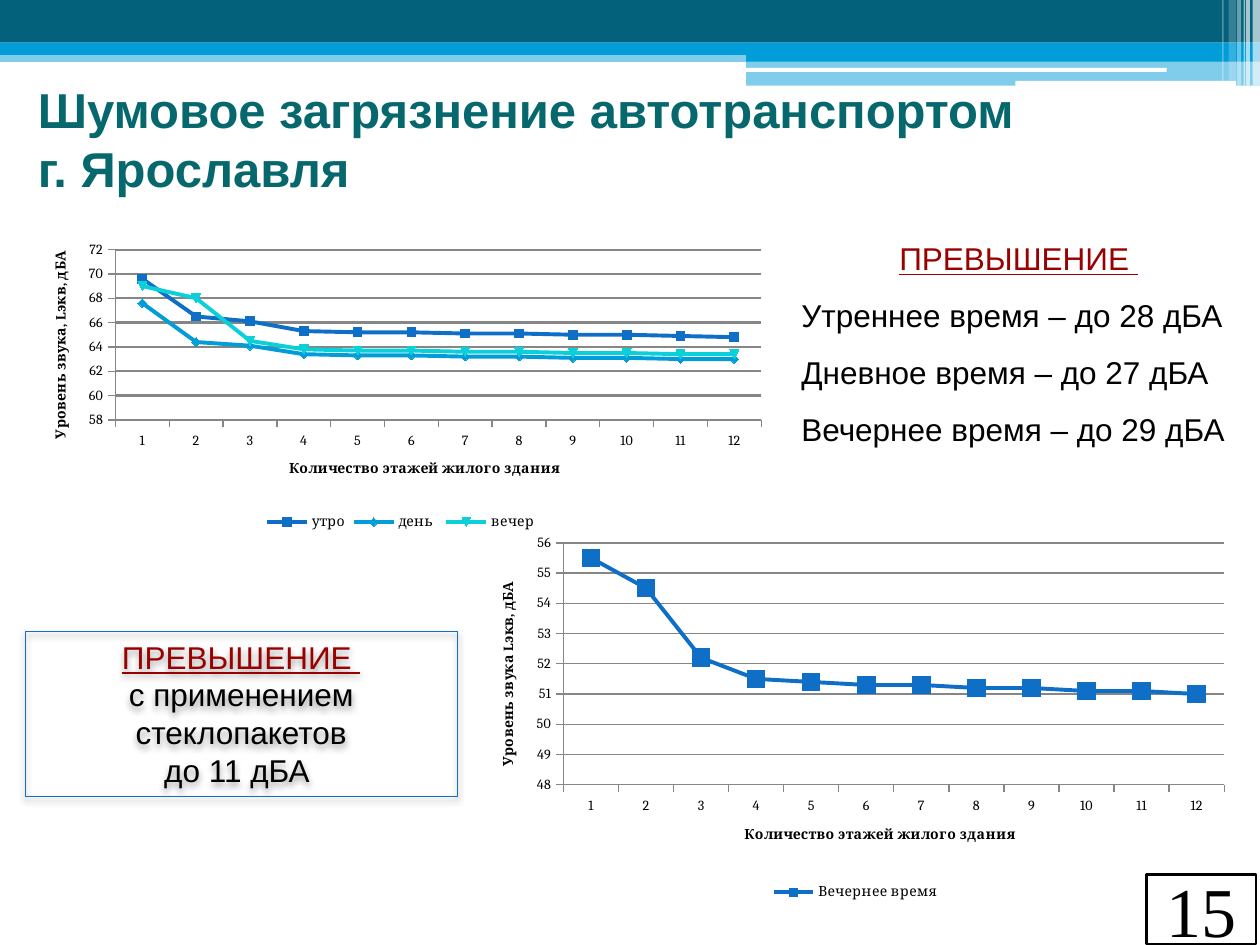
from lxml import etree
from pptx import Presentation
from pptx.chart.data import CategoryChartData
from pptx.dml.color import RGBColor
from pptx.enum.chart import XL_CHART_TYPE, XL_LEGEND_POSITION, XL_MARKER_STYLE, XL_TICK_MARK
from pptx.enum.shapes import MSO_SHAPE
from pptx.enum.text import MSO_ANCHOR, MSO_AUTO_SIZE, PP_ALIGN
from pptx.oxml import parse_xml
from pptx.oxml.ns import qn
from pptx.util import Cm, Pt

RECT, ROUNDED = MSO_SHAPE.RECTANGLE, MSO_SHAPE.ROUNDED_RECTANGLE
LEFT, CENTER = PP_ALIGN.LEFT, PP_ALIGN.CENTER
TOP, MIDDLE = MSO_ANCHOR.TOP, MSO_ANCHOR.MIDDLE
LINE_CHART = XL_CHART_TYPE.LINE_MARKERS
SQUARE = XL_MARKER_STYLE.SQUARE
BOTTOM = XL_LEGEND_POSITION.BOTTOM
OUTSIDE = XL_TICK_MARK.OUTSIDE
NO_AUTOSIZE = MSO_AUTO_SIZE.NONE

COLORS = {
    "teal": "04617B", "sky": "009DD9", "blue": "0F6FC6", "aqua": "0BD0D9",
    "title": "06686C", "red": "990000", "black": "000000", "white": "FFFFFF",
    "grid": "868686",
}
HEADER_BARS = [
    (RECT, (0, 1.02, 25.4, 0.23), "sky", 50),
    (RECT, (0, 0, 25.4, 0.86), "teal", 100),
    (RECT, (0, 0.86, 25.4, 0.25), "sky", 100),
    (RECT, (15.04, 0.99, 10.36, 0.25), "sky", 100),
    (RECT, (15.04, 1.22, 10.36, 0.51), "sky", 50),
    (ROUNDED, (15.01, 1.37, 8.51, 0.08), "white", 100),
    (ROUNDED, (20.47, 1.63, 4.45, 0.1), "white", 100),
]
HEADER_STRIPES = [
    (25.25, 0.15, 1.73, 65), (25.12, 0.08, 1.73, 65), (25.07, 0.03, 1.73, 60),
    (24.94, 0.08, 1.73, 40), (24.77, 0.15, 1.63, 20), (24.64, 0.03, 1.63, 30),
]
FLOORS = [str(floor) for floor in range(1, 13)]
STREET_NOISE = [
    ("утро", "blue", [69.6, 66.5, 66.1, 65.3, 65.2, 65.2, 65.1, 65.1, 65, 65, 64.9, 64.8]),
    ("день ", "sky", [67.6, 64.4, 64.1, 63.4, 63.3, 63.3, 63.2, 63.2, 63.1, 63.1, 63, 63]),
    ("вечер", "aqua", [69, 68, 64.5, 63.8, 63.7, 63.7, 63.6, 63.6, 63.5, 63.5, 63.4, 63.4]),
]
EVENING_NOISE = [
    ("Вечернее время", "blue",
     [55.5, 54.5, 52.2, 51.5, 51.4, 51.3, 51.3, 51.2, 51.2, 51.1, 51.1, 51]),
]
SHADOW = (
    '<a:effectLst xmlns:a="http://schemas.openxmlformats.org/drawingml/2006/main">'
    '<a:outerShdw blurRad="52070" dist="25400" dir="5400000" rotWithShape="0">'
    '<a:srgbClr val="000000"><a:alpha val="40000"/></a:srgbClr>'
    "</a:outerShdw></a:effectLst>"
)


def color(name):
    """Return a palette colour."""
    return RGBColor.from_string(COLORS[name])


def lengths(area):
    """Turn left, top, width and height in centimetres into lengths."""
    return [Cm(value) for value in area]


def add_block(page, kind, area, fill=None, opacity=100, line=None, width=0.75):
    """Add a shape with optional fill, transparency and outline."""
    block = page.shapes.add_shape(kind, *lengths(area))
    block.shadow.inherit = False
    if fill:
        block.fill.solid()
        block.fill.fore_color.rgb = color(fill)
    else:
        block.fill.background()
    if opacity < 100:
        tint = block.fill._xPr.find(".//" + qn("a:srgbClr"))
        etree.SubElement(tint, qn("a:alpha")).set("val", str(opacity * 1000))
    if line:
        block.line.color.rgb = color(line)
        block.line.width = Pt(width)
    else:
        block.line.fill.background()
    return block


def style_font(font, size, name, tone, bold=False, underline=False):
    """Set the look of a font."""
    font.size, font.name, font.bold, font.underline = Pt(size), name, bold, underline
    font.color.rgb = color(tone)


def write_text(box, text, size, font, tone="black", align=LEFT, anchor=TOP, bold=False):
    """Write paragraphs into a shape with one shared look."""
    frame = box.text_frame
    frame.text = text
    frame.word_wrap, frame.auto_size, frame.vertical_anchor = True, NO_AUTOSIZE, anchor
    for paragraph in frame.paragraphs:
        paragraph.alignment = align
        for span in paragraph.runs:
            style_font(span.font, size, font, tone, bold)


def mark_heading(box):
    """Make the first paragraph a centred, underlined red heading."""
    heading = box.text_frame.paragraphs[0]
    heading.alignment = CENTER
    style_font(heading.runs[0].font, 18, "Arial", "red", underline=True)


def place(box, area):
    """Move a placeholder to the given area."""
    box.left, box.top, box.width, box.height = lengths(area)


def remove_bullets(box, spacing):
    """Turn list items into plain paragraphs with the given line spacing."""
    for paragraph in box.text_frame.paragraphs:
        paragraph.line_spacing, paragraph.space_before = spacing, Pt(0)
        settings = paragraph._p.get_or_add_pPr()
        settings.set("marL", "0")
        settings.set("indent", "0")
        etree.SubElement(settings, qn("a:buNone"))


def title_axis(axis, text):
    """Give an axis a bold title, outer ticks and grey lines."""
    axis.axis_title.text_frame.text = text
    style_font(axis.axis_title.text_frame.paragraphs[0].runs[0].font, 8, "Cambria", "black", True)
    axis.major_tick_mark = OUTSIDE
    axis.format.line.color.rgb = color("grid")


def set_plot_area(chart, area):
    """Fix the inner plot area as fractions of the chart."""
    plot_area = chart._chartSpace.find(".//" + qn("c:plotArea"))
    for old in plot_area.findall(qn("c:layout")):
        plot_area.remove(old)
    layout = etree.Element(qn("c:layout"))
    manual = etree.SubElement(layout, qn("c:manualLayout"))
    settings = [("layoutTarget", "inner"), ("xMode", "edge"), ("yMode", "edge")]
    for tag, value in settings + list(zip("xywh", area)):
        etree.SubElement(manual, qn("c:" + tag)).set("val", str(value))
    plot_area.insert(0, layout)


def add_noise_chart(page, area, rows, value_title, scale, plot_area, grid_width):
    """Add a line chart of noise level by floor."""
    data = CategoryChartData()
    data.categories = FLOORS
    for name, _, values in rows:
        data.add_series(name, values)
    chart = page.shapes.add_chart(LINE_CHART, *lengths(area), data).chart
    style_font(chart.font, 8, "Cambria", "black")
    chart.has_title = False
    chart.has_legend = True
    chart.legend.position, chart.legend.include_in_layout = BOTTOM, False
    chart.plots[0].vary_by_categories = False
    levels = chart.value_axis
    levels.minimum_scale, levels.maximum_scale, levels.major_unit = scale
    levels.major_gridlines.format.line.color.rgb = color("grid")
    levels.major_gridlines.format.line.width = Pt(grid_width)
    title_axis(chart.category_axis, "Количество этажей жилого здания")
    title_axis(levels, value_title)
    for series, (_, tone, _) in zip(chart.plots[0].series, rows):
        series.smooth = False
        series.format.line.color.rgb = color(tone)
        series.format.line.width = Pt(2.25)
    set_plot_area(chart, plot_area)
    return chart


def main():
    """Build the noise pollution slide."""
    deck = Presentation()
    deck.slide_width, deck.slide_height = Cm(25.4), Cm(19.05)
    page = deck.slides.add_slide(deck.slide_layouts[1])
    for kind, area, tone, opacity in HEADER_BARS:
        add_block(page, kind, area, tone, opacity)
    for left, width, height, opacity in HEADER_STRIPES:
        add_block(page, RECT, (left, 0, width, height), "white", opacity)

    add_noise_chart(page, (0.51, 4.32, 15.14, 6.48), STREET_NOISE, "Уровень звука, Lэкв, дБА",
                    (58, 72, 2), (0.12, 0.11, 0.86, 0.53), 1.25)
    evening = add_noise_chart(page, (9.5, 10.64, 15.49, 7.62), EVENING_NOISE,
                              "Уровень звука Lэкв, дБА", (48, 56, 1),
                              (0.12, 0.04, 0.86, 0.64), 0.75)
    marker = evening.plots[0].series[0].marker
    marker.style, marker.size = SQUARE, 10

    title, excess = page.placeholders
    place(title, (0.51, 1.47, 24.61, 2.64))
    write_text(title, "Шумовое загрязнение автотранспортом\nг. Ярославля", 28, "Arial",
               "title", bold=True)
    place(excess, (15.9, 4.32, 9.27, 6.02))
    write_text(excess, "ПРЕВЫШЕНИЕ \nУтреннее время – до 28 дБА\nДневное время – до 27 дБА\n"
               "Вечернее время – до 29 дБА", 18, "Arial")
    remove_bullets(excess, 1.5)
    mark_heading(excess)

    glazing = add_block(page, RECT, (0.51, 12.73, 8.71, 3.33), line="blue")
    write_text(glazing, "ПРЕВЫШЕНИЕ \nс применением стеклопакетов\nдо 11 дБА ", 18, "Arial",
               align=CENTER)
    mark_heading(glazing)
    properties = glazing._element.spPr
    properties.replace(properties.find(qn("a:effectLst")), parse_xml(SHADOW))

    number = add_block(page, RECT, (23.11, 17.63, 2.21, 1.4), "white", line="black", width=1.5)
    write_text(number, "15", 40, "Times New Roman", align=CENTER, anchor=MIDDLE)
    deck.save("out.pptx")


if __name__ == "__main__":
    main()
